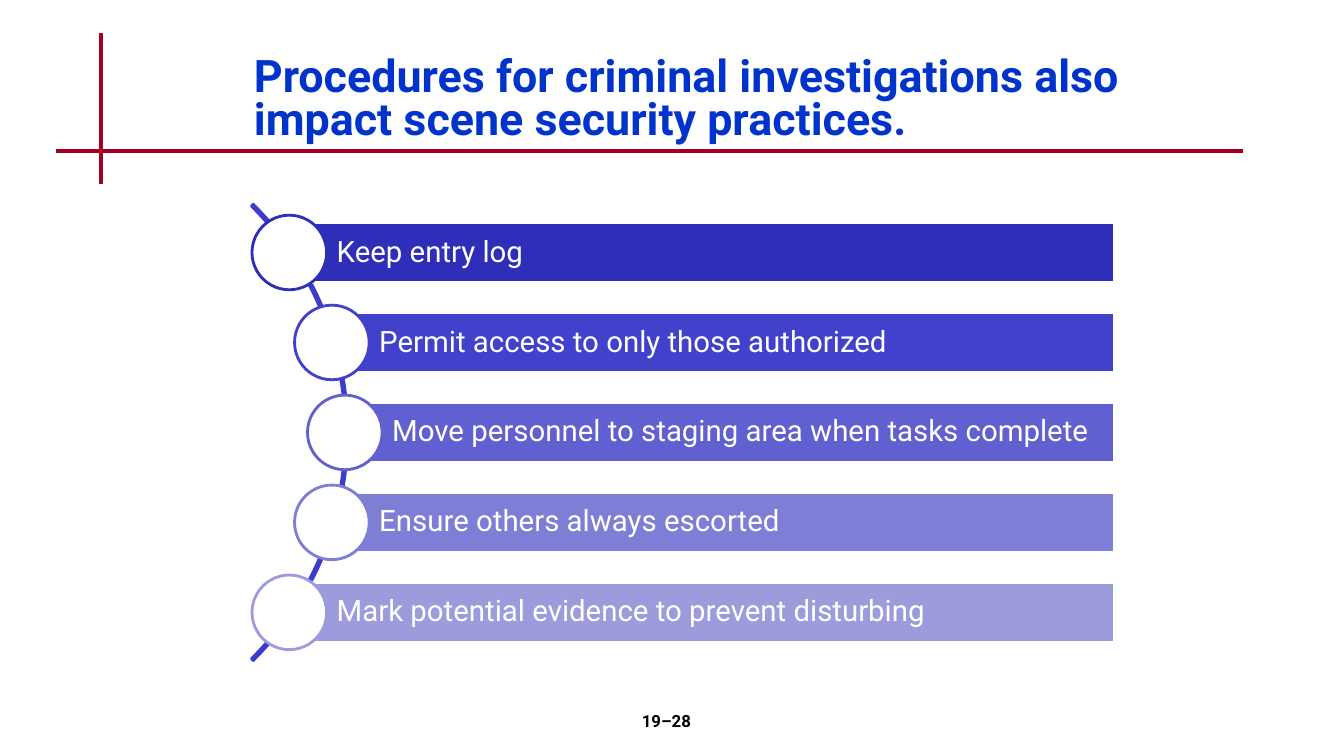
import math

from lxml import etree
from pptx import Presentation
from pptx.dml.color import RGBColor
from pptx.enum.shapes import MSO_CONNECTOR, MSO_SHAPE
from pptx.enum.text import MSO_ANCHOR, PP_ALIGN
from pptx.oxml.ns import qn
from pptx.util import Emu, Pt

STRAIGHT = MSO_CONNECTOR.STRAIGHT
ARC, BAR, CIRCLE = MSO_SHAPE.BLOCK_ARC, MSO_SHAPE.RECTANGLE, MSO_SHAPE.OVAL
TOP, MIDDLE = MSO_ANCHOR.TOP, MSO_ANCHOR.MIDDLE
LEFT, CENTER = PP_ALIGN.LEFT, PP_ALIGN.CENTER

EMU_PER_PX = 9144  # 100 px to the inch
FONT = "Roboto"
COLORS = {
    "white": "FFFFFF",
    "black": "000000",
    "title": "0033CC",
    "rule": "A50021",
    "arc": "3B3BCD",
    "step1": "2E2EB9",
    "step2": "4141CB",
    "step3": "6060D0",
    "step4": "7E7ED6",
    "step5": "9C9CDD",
}
STEPS = [
    "Keep entry log",
    "Permit access to only those authorized",
    "Move personnel to staging area when tasks complete",
    "Ensure others always escorted",
    "Mark potential evidence to prevent disturbing",
]

ARC_X, ARC_Y, ARC_RADIUS = 25, 429, 320
STEP_RADIUS = 317  # curve on which the step circles are centred
STEP_PITCH = 89.25
BAR_RIGHT, BAR_HEIGHT, CIRCLE_SIZE = 1105, 59, 74


def px(length):
    return Emu(round(length * EMU_PER_PX))


def rgb(name):
    return RGBColor.from_string(COLORS[name])


def add_rule(slide, x1, y1, x2, y2):
    rule = slide.shapes.add_connector(STRAIGHT, px(x1), px(y1), px(x2), px(y2))
    rule.line.color.rgb = rgb("rule")
    rule.line.width = Pt(3)
    etree.SubElement(rule._element.spPr, qn("a:effectLst"))


def add_outlined(slide, kind, box, line, fill=None):
    shape = slide.shapes.add_shape(kind, *map(px, box))
    shape.shadow.inherit = False
    if fill:
        shape.fill.solid()
        shape.fill.fore_color.rgb = rgb(fill)
    else:
        shape.fill.background()
    shape.line.color.rgb = rgb(line)
    shape.line.width = Pt(2)
    return shape


def write(shape, text, size, color, bold=False, align=LEFT, anchor=MIDDLE,
          spacing=1.0, insets=(10, 5, 10, 5)):
    """Put one paragraph in the shape; insets run left, top, right, bottom."""
    frame = shape.text_frame
    frame.word_wrap = True
    frame.vertical_anchor = anchor
    (frame.margin_left, frame.margin_top,
     frame.margin_right, frame.margin_bottom) = map(px, insets)
    paragraph = frame.paragraphs[0]
    paragraph.alignment = align
    paragraph.line_spacing = spacing
    run = paragraph.add_run()
    run.text = text
    run.font.name = FONT
    run.font.size = Pt(size)
    run.font.bold = bold
    run.font.color.rgb = rgb(color)


def add_text(slide, box, text, size, color, **style):
    write(slide.shapes.add_textbox(*map(px, box)), text, size, color, **style)


def add_arc(slide):
    box = (ARC_X - ARC_RADIUS, ARC_Y - ARC_RADIUS, 2 * ARC_RADIUS, 2 * ARC_RADIUS)
    arc = add_outlined(slide, ARC, box, "arc")
    for index, value in enumerate((189, 27, 0.004)):
        arc.adjustments[index] = value


def add_step(slide, index, text):
    """Add a bar and its circle, centred where the step meets the curve."""
    color = f"step{index + 1}"
    offset = (index - (len(STEPS) - 1) / 2) * STEP_PITCH
    x = ARC_X + math.sqrt(STEP_RADIUS ** 2 - offset ** 2)
    y = ARC_Y + offset
    bar_box = (x, y - BAR_HEIGHT / 2, BAR_RIGHT - x, BAR_HEIGHT)
    bar = add_outlined(slide, BAR, bar_box, "white", color)
    write(bar, text, 21, "white", spacing=0.9, insets=(47, 6, 6, 6))
    half = CIRCLE_SIZE / 2
    circle_box = (x - half, y - half, CIRCLE_SIZE, CIRCLE_SIZE)
    add_outlined(slide, CIRCLE, circle_box, color, "white")


def main():
    prs = Presentation()
    prs.slide_width, prs.slide_height = px(1333), px(750)
    slide = prs.slides.add_slide(prs.slide_layouts[6])
    add_rule(slide, 100, 33, 100, 183)
    add_rule(slide, 56, 150, 1233, 150)
    add_text(slide, (242, 50, 903, 100),
             "Procedures for criminal investigations also impact scene security practices.",
             32, "title", bold=True, spacing=0.8)
    add_text(slide, (522, 700, 278, 50), "19–28", 12, "black",
             bold=True, align=CENTER, anchor=TOP)
    add_arc(slide)
    for index, text in enumerate(STEPS):
        add_step(slide, index, text)
    prs.save("out.pptx")


if __name__ == "__main__":
    main()
